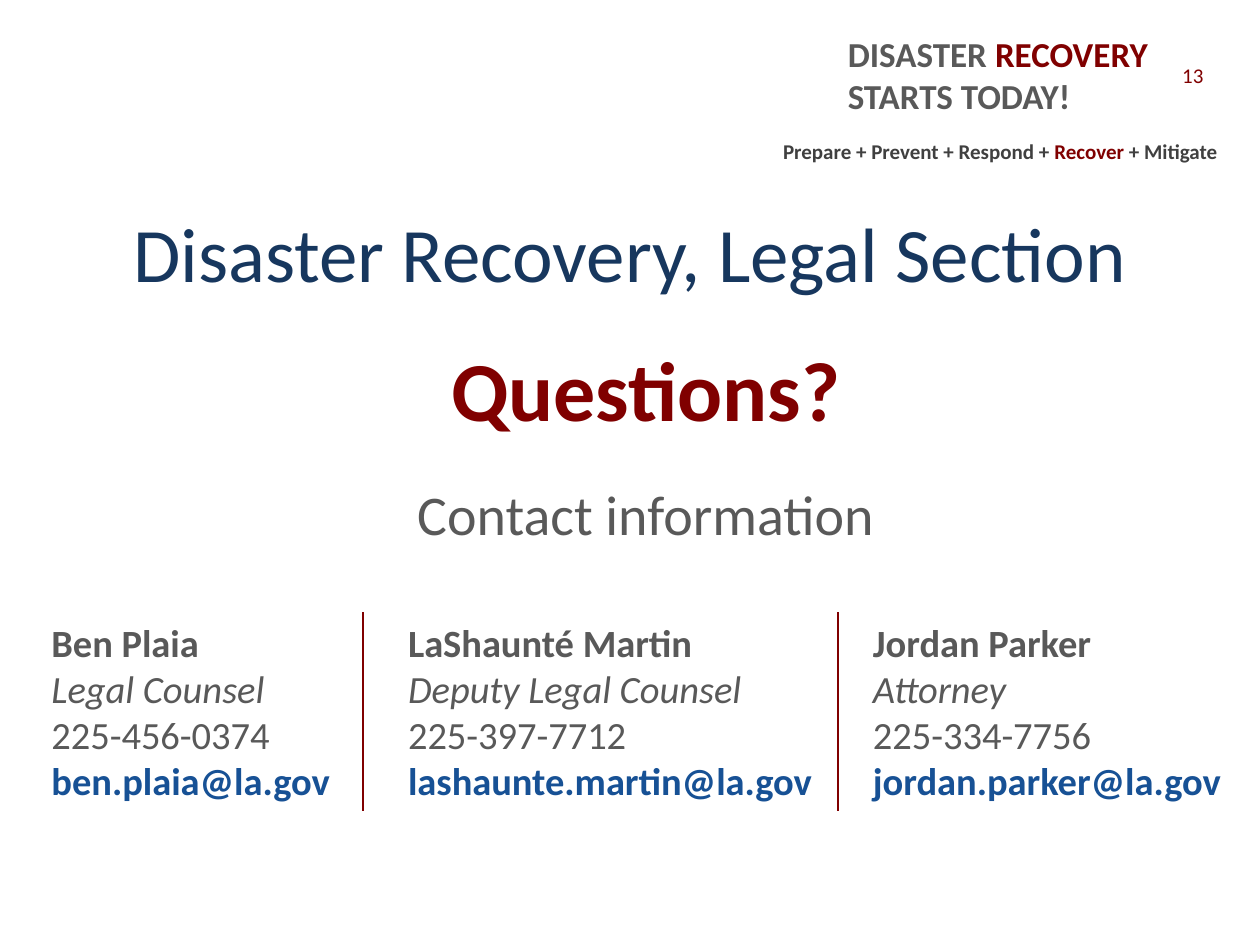
"""Build the closing contact slide of a disaster recovery presentation."""
from dataclasses import dataclass

from lxml import etree
from pptx import Presentation
from pptx.dml.color import RGBColor
from pptx.enum import shapes, text
from pptx.oxml import ns
from pptx.util import Inches, Pt


@dataclass(frozen=True)
class Theme:
    font: str = "Calibri"
    maroon: str = "800000"
    navy: str = "17375E"
    blue: str = "175195"
    gray: str = "595959"
    dark_gray: str = "404040"
    small: int = 12
    banner: int = 20
    contact: int = 22
    subtitle: int = 32
    title: int = 44
    question: int = 48
    rule: float = 0.75


@dataclass(frozen=True)
class Box:
    left: float
    top: float
    width: float
    height: float


@dataclass(frozen=True)
class Contact:
    left: float
    name: str
    role: str
    phone: str
    email: str


THEME = Theme()
CONTACT_TOP, CONTACT_WIDTH, CONTACT_HEIGHT = 4.86, 3.51, 1.58
CONTACTS = (
    Contact(0.31, "Ben Plaia", "Legal Counsel", "225-456-0374", "ben.plaia@la.gov"),
    Contact(3.14, "LaShaunté Martin", "Deputy Legal Counsel", "225-397-7712",
            "lashaunte.martin@la.gov"),
    Contact(6.83, "Jordan Parker", "Attorney", "225-334-7756", "jordan.parker@la.gov"),
)
DIVIDERS = (2.88, 6.65)


def place(shape, box: Box) -> None:
    """Move and size a shape."""
    shape.left, shape.top = Inches(box.left), Inches(box.top)
    shape.width, shape.height = Inches(box.width), Inches(box.height)


def style(font, size: float, color: str, bold: bool = False, italic: bool = False) -> None:
    """Apply the theme font with the given look."""
    font.name, font.size, font.bold, font.italic = THEME.font, Pt(size), bold, italic
    font.color.rgb = RGBColor.from_string(color)


def add_text_box(slide, box: Box, lines: int = 1):
    """Add a wrapping text box with the given number of paragraphs."""
    shape = slide.shapes.add_textbox(0, 0, 0, 0)
    place(shape, box)
    frame = shape.text_frame
    frame.word_wrap = True
    frame.auto_size = text.MSO_AUTO_SIZE.SHAPE_TO_FIT_TEXT
    for _ in range(lines - 1):
        frame.add_paragraph()
    return frame


def add_runs(paragraph, size: float, runs: tuple[tuple[str, str], ...]) -> None:
    """Fill a paragraph with bold runs of differing colours."""
    for words, color in runs:
        run = paragraph.add_run()
        run.text = words
        style(run.font, size, color, bold=True)


def add_header(slide) -> None:
    """Add the motto, the banner and the slide number."""
    motto = add_text_box(slide, Box(4.36, 1.05, 5.4, 0.3)).paragraphs[0]
    motto.alignment = text.PP_ALIGN.RIGHT
    add_runs(motto, THEME.small, (("Prepare + Prevent + Respond + ", THEME.dark_gray),
                                  ("Recover ", THEME.maroon),
                                  ("+ Mitigate", THEME.dark_gray)))
    first, second = add_text_box(slide, Box(6.63, 0.21, 2.68, 0.77), 2).paragraphs
    add_runs(first, THEME.banner, (("DISASTER ", THEME.gray), ("RECOVERY", THEME.maroon)))
    add_runs(second, THEME.banner, (("STARTS TODAY!", THEME.gray),))
    frame = add_text_box(slide, Box(5.64, 0.21, 4.01, 0.77))
    frame.auto_size = text.MSO_AUTO_SIZE.NONE
    frame.vertical_anchor = text.MSO_ANCHOR.MIDDLE
    number = frame.paragraphs[0]
    number.text = "13"
    number.alignment = text.PP_ALIGN.RIGHT
    style(number.font, THEME.small, THEME.maroon)


def fill_title(slide) -> None:
    """Fill the title placeholder."""
    title = slide.shapes.title
    place(title, Box(0.5, 1.49, 9, 1.1))
    frame = title.text_frame
    frame.auto_size = text.MSO_AUTO_SIZE.NONE
    frame.vertical_anchor = text.MSO_ANCHOR.MIDDLE
    paragraph = frame.paragraphs[0]
    paragraph.text = "Disaster Recovery, Legal Section"
    paragraph.alignment = text.PP_ALIGN.CENTER
    paragraph.line_spacing = 0.9
    style(paragraph.font, THEME.title, THEME.navy)


def fill_body(slide) -> None:
    """Fill the body placeholder with two centred lines without bullets."""
    body = slide.placeholders[1]
    place(body, Box(0.5, 2.72, 9, 1.9))
    frame = body.text_frame
    frame.auto_size = text.MSO_AUTO_SIZE.NONE
    frame.text = "Questions?\nContact information"
    question, subtitle = frame.paragraphs
    for paragraph, space in ((question, 0), (subtitle, 27)):
        paragraph.alignment = text.PP_ALIGN.CENTER
        paragraph.line_spacing = 0.9
        paragraph.space_before = Pt(space)
        properties = paragraph._p.get_or_add_pPr()
        properties.set("marL", str(Inches(0.25)))
        properties.set("indent", "0")
        etree.SubElement(properties, ns.qn("a:buNone"))
    style(question.font, THEME.question, THEME.maroon, bold=True)
    style(subtitle.font, THEME.subtitle, THEME.gray)


def add_contact(slide, contact: Contact) -> None:
    """Add one contact card."""
    box = Box(contact.left, CONTACT_TOP, CONTACT_WIDTH, CONTACT_HEIGHT)
    rows = ((contact.name, THEME.gray, True, False),
            (contact.role, THEME.gray, False, True),
            (contact.phone, THEME.gray, False, False),
            (contact.email, THEME.blue, True, False))
    frame = add_text_box(slide, box, len(rows))
    for paragraph, (words, color, bold, italic) in zip(frame.paragraphs, rows):
        paragraph.text = words
        style(paragraph.font, THEME.contact, color, bold, italic)


def add_divider(slide, x: float) -> None:
    """Add a vertical rule between contact cards."""
    line = slide.shapes.add_connector(
        shapes.MSO_CONNECTOR.STRAIGHT, Inches(x), Inches(CONTACT_TOP),
        Inches(x), Inches(CONTACT_TOP + CONTACT_HEIGHT))
    line.line.color.rgb = RGBColor.from_string(THEME.maroon)
    line.line.width = Pt(THEME.rule)
    etree.SubElement(line._element.spPr, ns.qn("a:effectLst"))


def main() -> None:
    """Build and save the presentation."""
    presentation = Presentation()
    presentation.slide_width, presentation.slide_height = Inches(10), Inches(7.5)
    slide = presentation.slides.add_slide(presentation.slide_layouts[1])
    add_header(slide)
    fill_title(slide)
    fill_body(slide)
    for contact in CONTACTS:
        add_contact(slide, contact)
    for x in DIVIDERS:
        add_divider(slide, x)
    presentation.save("out.pptx")


if __name__ == "__main__":
    main()
